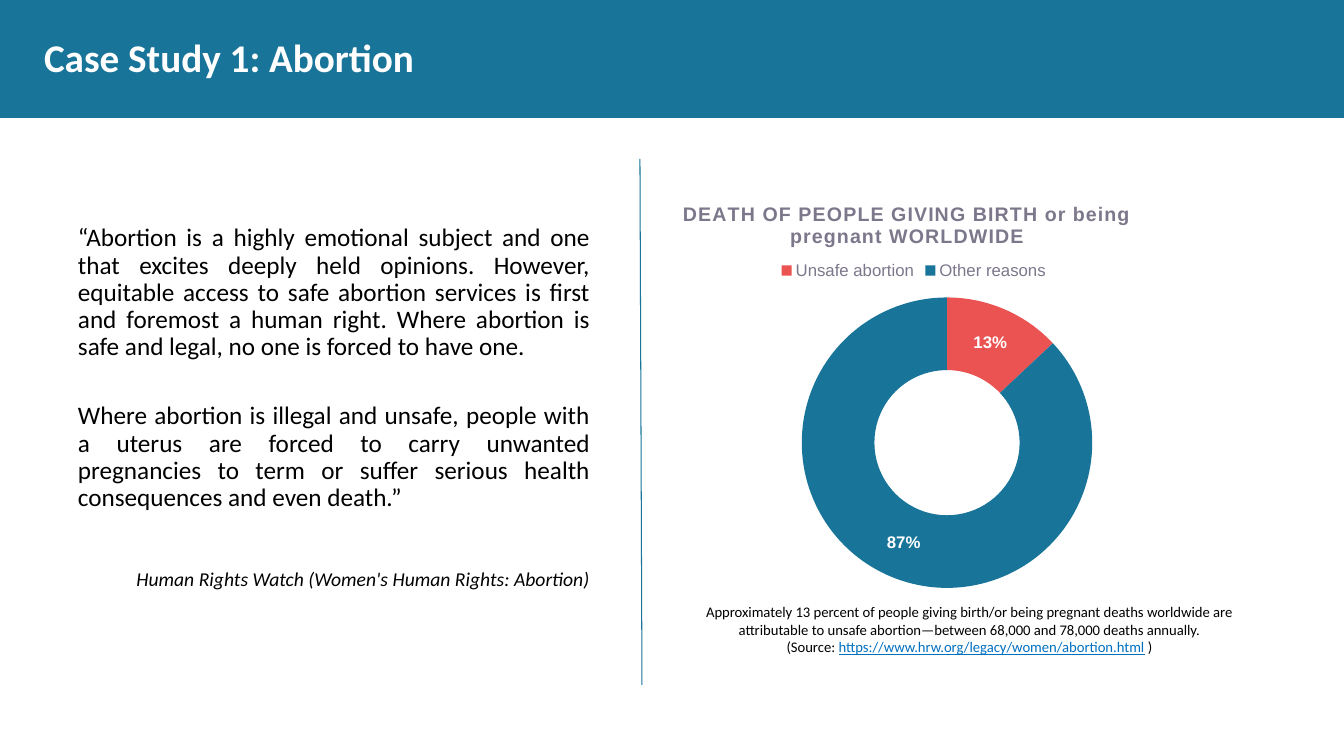
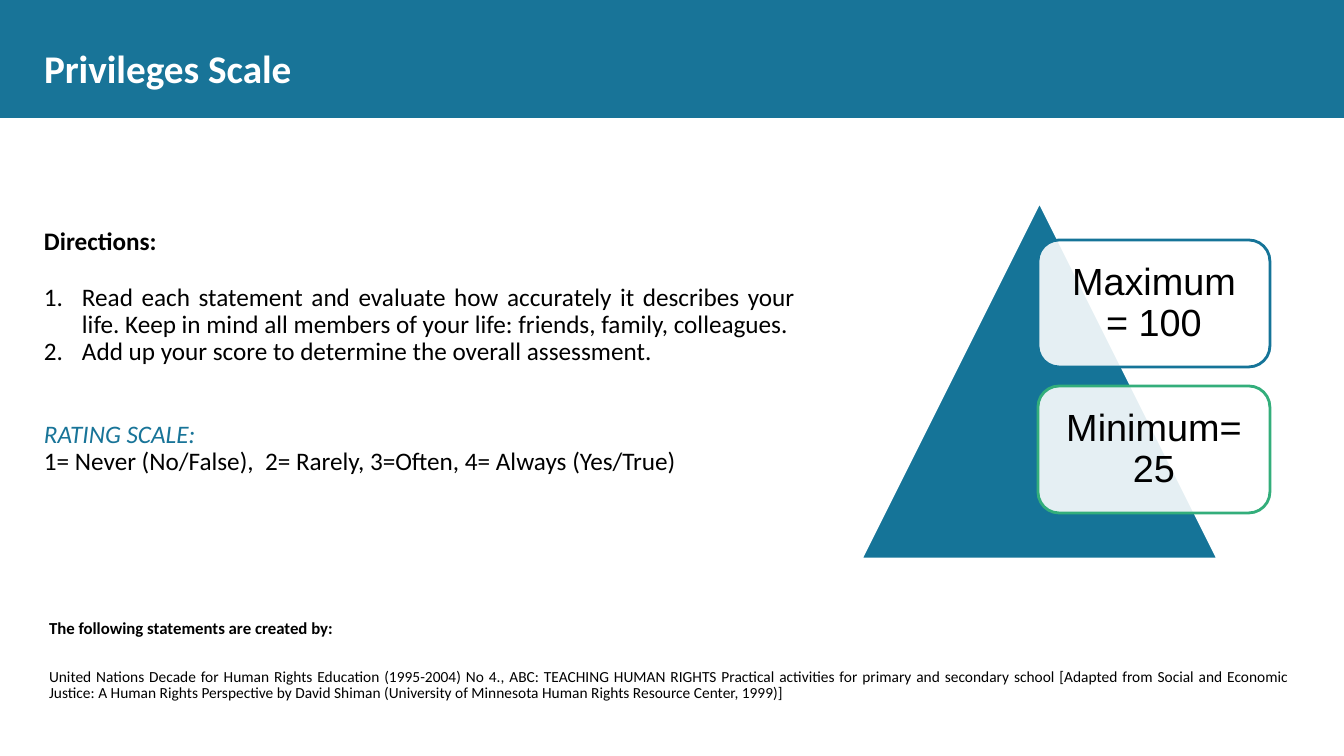
import pptx
import pptx.chart.data
import pptx.dml.color
import pptx.enum.chart
import pptx.enum.shapes
import pptx.enum.text
import pptx.oxml
import pptx.oxml.ns
import pptx.util

PX = 914400 / 100.8
Pt = pptx.util.Pt
qn = pptx.oxml.ns.qn
Align = pptx.enum.text.PP_ALIGN
Anchor = pptx.enum.text.MSO_ANCHOR
Shape = pptx.enum.shapes.MSO_SHAPE


class Theme:
    blue = "187498"
    pyramid = "157498"
    green = "33AE7B"
    red = "EB5353"
    grey = "7D778B"
    link = "0070C0"
    black = "000000"
    white = "FFFFFF"
    text_font = "Calibri"
    graphic_font = "Arial"
    title = 28
    score = 27
    body = 18
    chart_title = 14
    attribution = 14
    label = 12
    note = 11
    caption = 10.5


def px(*lengths):
    return [round(length * PX) for length in lengths]


def style(font, size, color=Theme.black, name=Theme.text_font, bold=False, italic=False):
    font.name = name
    font.size = Pt(size)
    font.bold = bold
    font.italic = italic
    font.color.rgb = pptx.dml.color.RGBColor.from_string(color)


rgb = pptx.dml.color.RGBColor.from_string
presentation = pptx.Presentation()
presentation.slide_width, presentation.slide_height = px(1344, 756)
layout = presentation.slide_layouts[5]

slides = []
for heading, top in (("Case Study 1: Abortion", 19), ("Privileges Scale", 30)):
    slide = presentation.slides.add_slide(layout)
    title = slide.shapes.title
    title.left, title.top, title.width, title.height = px(44, top, 1256, 75)
    frame = title.text_frame
    frame.margin_left = frame.margin_right = frame.margin_top = frame.margin_bottom = 0
    frame.auto_size = pptx.enum.text.MSO_AUTO_SIZE.NONE
    frame.vertical_anchor = Anchor.MIDDLE
    frame.text = heading
    frame.paragraphs[0].alignment = Align.LEFT
    style(frame.paragraphs[0].runs[0].font, Theme.title, Theme.white, bold=True)
    slides.append(slide)
case_slide, scale_slide = slides

band = case_slide.shapes.add_shape(Shape.RECTANGLE, *px(0, 0, 1344, 118))
band.shadow.inherit = False
band.fill.solid()
band.fill.fore_color.rgb = rgb(Theme.blue)
band.line.fill.background()
band.element.nvSpPr.cNvPr.set("id", "20")
layout.shapes.element.insert(2, band.element)

quote = (
    ("“Abortion is a highly emotional subject and one that excites deeply held opinions. "
     "However, equitable access to safe abortion services is first and foremost a human right. "
     "Where abortion is safe and legal, no one is forced to have one.",
     dict(size=Theme.body), 0, Align.JUSTIFY, 0.9, False),
    ("Where abortion is illegal and unsafe, people with a uterus are forced to carry unwanted "
     "pregnancies to term or suffer serious health consequences and even death.”",
     dict(size=Theme.body), 30, Align.JUSTIFY, 0.9, False),
    ("Human Rights Watch (Women's Human Rights: Abortion)",
     dict(size=Theme.attribution, italic=True), 37, Align.RIGHT, 1.15, False),
)
caption = (
    ("Approximately 13 percent of people giving birth/or being pregnant deaths worldwide are "
     "attributable to unsafe abortion—between 68,000 and 78,000 deaths annually.",
     dict(size=Theme.caption), 0, Align.CENTER, 1.0, False),
    ("(Source: ", dict(size=Theme.caption), 0, Align.CENTER, 1.0, False),
)
directions = (
    ("Directions:", dict(size=Theme.body, bold=True), 0, Align.JUSTIFY, 0.9, False),
    ("Read each statement and evaluate how accurately it describes your life. "
     "Keep in mind all members of your life: friends, family, colleagues.",
     dict(size=Theme.body), 20, Align.JUSTIFY, 0.9, True),
    ("Add up your score to determine the overall assessment.",
     dict(size=Theme.body), 0, Align.JUSTIFY, 0.9, True),
    ("RATING SCALE:", dict(size=Theme.body, color=Theme.blue, italic=True),
     40, Align.JUSTIFY, 0.9, False),
    ("1= Never (No/False),  2= Rarely, 3=Often, 4= Always (Yes/True)",
     dict(size=Theme.body), 0, Align.JUSTIFY, 0.9, False),
)
credits = (
    ("The following statements are created by:",
     dict(size=Theme.label, bold=True), 0, Align.JUSTIFY, 0.9, False),
    ("United Nations Decade for Human Rights Education (1995-2004) No 4., ABC: TEACHING HUMAN "
     "RIGHTS Practical activities for primary and secondary school [Adapted from Social and "
     "Economic Justice: A Human Rights Perspective by David Shiman (University of Minnesota "
     "Human Rights Resource Center, 1999)]",
     dict(size=Theme.note), 22, Align.JUSTIFY, 0.9, False),
)

for slide, box, rows in (
    (case_slide, (78, 225, 512, 330), quote),
    (case_slide, (702, 603, 535, 78), caption),
    (scale_slide, (44, 229, 751, 318), directions),
    (scale_slide, (49, 620, 1241, 83), credits),
):
    frame = slide.shapes.add_textbox(*px(*box)).text_frame
    frame.word_wrap = True
    frame.margin_left = frame.margin_right = frame.margin_top = frame.margin_bottom = 0
    for index, (text, look, before, alignment, spacing, numbered) in enumerate(rows):
        paragraph = frame.add_paragraph() if index else frame.paragraphs[0]
        paragraph.text = text
        paragraph.alignment = alignment
        paragraph.line_spacing = spacing
        paragraph.space_before = Pt(before)
        if numbered:
            indent = px(38)[0]
            properties = paragraph._p.get_or_add_pPr()
            properties.set("marL", str(indent))
            properties.set("indent", str(-indent))
            number = properties.makeelement(qn("a:buAutoNum"), {"type": "arabicPeriod"})
            properties.append(number)
        style(paragraph.runs[0].font, **look)
    if rows is caption:
        for text, color, underline in (
            ("https://www.hrw.org/legacy/women/abortion.html", Theme.link, True),
            (" )", Theme.black, False),
        ):
            run = paragraph.add_run()
            run.text = text
            style(run.font, Theme.caption, color)
            run.font.underline = underline

divider = case_slide.shapes.add_connector(
    pptx.enum.shapes.MSO_CONNECTOR.STRAIGHT, *px(640, 159, 642, 685))
divider.line.color.rgb = rgb(Theme.blue)
divider.line.width = Pt(0.75)
properties = divider.element.spPr
properties.append(properties.makeelement(qn("a:effectLst"), {}))

data = pptx.chart.data.CategoryChartData()
data.categories = ["Unsafe abortion", "Other reasons"]
data.add_series("Series 1", (13, 87))
chart = case_slide.shapes.add_chart(
    pptx.enum.chart.XL_CHART_TYPE.DOUGHNUT, *px(602, 190, 645, 398), data).chart
style(chart.font, Theme.label, Theme.grey, Theme.graphic_font)

chart.has_title = True
paragraph = chart.chart_title.text_frame.paragraphs[0]
paragraph.text = "DEATH OF PEOPLE GIVING BIRTH or being pregnant WORLDWIDE"
style(paragraph.runs[0].font, Theme.chart_title, Theme.grey, Theme.graphic_font, bold=True)
chart.element.xpath("c:chart/c:title//a:rPr")[0].set("spc", "65")

chart.has_legend = True
chart.legend.position = pptx.enum.chart.XL_LEGEND_POSITION.TOP
chart.legend.include_in_layout = False
style(chart.legend.font, Theme.label, Theme.grey, Theme.graphic_font)

plot = chart.plots[0]
plot.vary_by_categories = True
plot.has_data_labels = True
labels = plot.data_labels
labels.show_percentage = True
labels.show_value = False
labels.number_format = "0%"
labels.number_format_is_linked = False
style(labels.font, Theme.label, Theme.white, Theme.graphic_font, bold=True)
for index, color in enumerate((Theme.red, Theme.blue)):
    fill = plot.series[0].points[index].format.fill
    fill.solid()
    fill.fore_color.rgb = rgb(color)

for part, settings in (
    ("title", dict(xMode="edge", yMode="edge", x=0.12, y=0.02)),
    ("legend", dict(xMode="edge", yMode="edge", x=0.27, y=0.17)),
    ("plotArea", dict(layoutTarget="inner", xMode="edge", yMode="edge",
                      x=0.3, y=0.27, w=0.47, h=0.73)),
):
    element = chart.element.xpath("c:chart/c:" + part)[0]
    for old_layout in element.findall(qn("c:layout")):
        element.remove(old_layout)
    part_layout = element.makeelement(qn("c:layout"), {})
    manual = part_layout.makeelement(qn("c:manualLayout"), {})
    part_layout.append(manual)
    for key, value in settings.items():
        manual.append(manual.makeelement(qn("c:" + key), {"val": str(value)}))
    overlay = element.find(qn("c:overlay"))
    if overlay is None:
        element.insert(0, part_layout)
    else:
        overlay.addprevious(part_layout)

pyramid = scale_slide.shapes.add_shape(Shape.ISOSCELES_TRIANGLE, *px(861, 202, 357, 357))
pyramid.shadow.inherit = False
pyramid.fill.solid()
pyramid.fill.fore_color.rgb = rgb(Theme.pyramid)
pyramid.line.color.rgb = rgb(Theme.white)
pyramid.line.width = Pt(2)

for index, (text, color) in enumerate((
    ("Maximum= 100", Theme.pyramid),
    ("Minimum= 25", Theme.green),
)):
    card = scale_slide.shapes.add_shape(
        Shape.ROUNDED_RECTANGLE, *px(1038, 240 + 146 * index, 232, 127))
    card.shadow.inherit = False
    card.fill.solid()
    card.fill.fore_color.rgb = rgb(Theme.white)
    white = card.element.spPr.find(qn("a:solidFill"))[0]
    white.append(white.makeelement(qn("a:alpha"), {"val": "89000"}))
    card.line.color.rgb = rgb(color)
    card.line.width = Pt(2)
    frame = card.text_frame
    frame.word_wrap = True
    frame.vertical_anchor = Anchor.MIDDLE
    frame.margin_left = frame.margin_right = frame.margin_top = frame.margin_bottom = px(17)[0]
    frame.text = text
    paragraph = frame.paragraphs[0]
    paragraph.alignment = Align.CENTER
    paragraph.line_spacing = 0.9
    style(paragraph.runs[0].font, Theme.score, name=Theme.graphic_font)

presentation.save("out.pptx")
